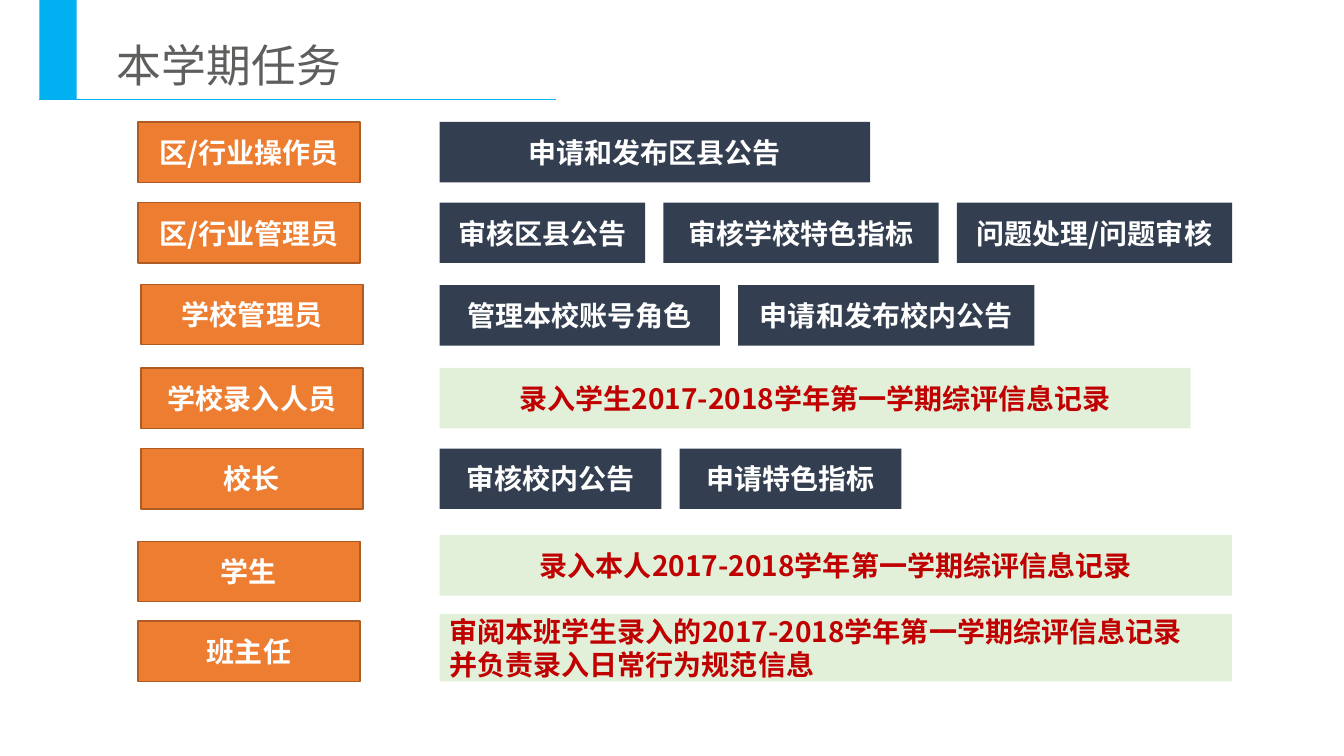
from dataclasses import dataclass
from typing import Optional

from lxml import etree
from pptx import Presentation
from pptx import util as u
from pptx.dml.color import RGBColor
from pptx.enum import shapes, text
from pptx.oxml.ns import qn

EMU_PER_PX = 9144  # 100 px to the inch
FONT = "Noto Sans CJK SC"
COLORS = {
    "accent": "00B0F0",
    "title": "5F5E5C",
    "role": "ED7D31",
    "role_border": "AF5C24",
    "task": "333F50",
    "entry": "E2F0D9",
    "entry_text": "C00000",
    "white": "FFFFFF",
}

ROLE_WIDTH = 220
BOX_HEIGHT = 60
TASK_LEFT = 436
TASK_GAP = 18


@dataclass(frozen=True)
class Task:
    label: str
    width: int
    is_entry: bool = False
    height: int = BOX_HEIGHT


@dataclass(frozen=True)
class Row:
    role: str
    role_left: int
    role_top: int
    task_top: int
    tasks: tuple[Task, ...]


ROWS = (
    Row("区/行业操作员", 137, 121, 121, (Task("申请和发布区县公告", 427),)),
    Row("区/行业管理员", 137, 201, 201, (
        Task("审核区县公告", 204),
        Task("审核学校特色指标", 273),
        Task("问题处理/问题审核", 273),
    )),
    Row("学校管理员", 140, 282, 283, (
        Task("管理本校账号角色", 278),
        Task("申请和发布校内公告", 294),
    )),
    Row("学校录入人员", 140, 365, 365, (
        Task("录入学生2017-2018学年第一学期综评信息记录", 745, is_entry=True),
    )),
    Row("校长", 140, 445, 445, (
        Task("审核校内公告", 220),
        Task("申请特色指标", 220),
    )),
    Row("学生", 137, 537, 531, (
        Task("录入本人2017-2018学年第一学期综评信息记录", 786, is_entry=True),
    )),
    Row("班主任", 137, 616, 609, (
        Task("审阅本班学生录入的2017-2018学年第一学期综评信息记录\n"
             "并负责录入日常行为规范信息", 786, is_entry=True, height=67),
    )),
)


def px(length: int) -> u.Emu:
    return u.Emu(length * EMU_PER_PX)


def color(name: str) -> RGBColor:
    return RGBColor.from_string(COLORS[name])


def write_text(shape, content: str, *, size: int, font_color: str,
               bold: bool = False, centered: bool = False,
               line_points: Optional[int] = None) -> None:
    """Fill a shape with one paragraph for each line of content."""
    frame = shape.text_frame
    frame.word_wrap = True
    frame.text = content
    for paragraph in frame.paragraphs:
        paragraph.alignment = (text.PP_ALIGN.CENTER if centered
                               else text.PP_ALIGN.LEFT)
        if line_points:
            paragraph.line_spacing = u.Pt(line_points)
        for run in paragraph.runs:
            run.font.size = u.Pt(size)
            run.font.bold = bold
            run.font.color.rgb = color(font_color)
            run.font.name = FONT
            east_asian = etree.SubElement(run.font._element, qn("a:ea"))
            east_asian.set("typeface", FONT)


def add_box(slide, left: int, top: int, width: int, height: int,
            fill: str, border: Optional[str] = None):
    shape = slide.shapes.add_shape(shapes.MSO_SHAPE.RECTANGLE, px(left),
                                   px(top), px(width), px(height))
    shape.shadow.inherit = False
    shape.fill.solid()
    shape.fill.fore_color.rgb = color(fill)
    if border:
        shape.line.color.rgb = color(border)
        shape.line.width = u.Pt(1)
    else:
        shape.line.fill.background()
    shape.text_frame.vertical_anchor = text.MSO_ANCHOR.MIDDLE
    return shape


def add_header(slide) -> None:
    add_box(slide, 39, 0, 37, 99, "accent")
    rule = slide.shapes.add_connector(shapes.MSO_CONNECTOR.STRAIGHT,
                                      px(39), px(99), px(551), px(99))
    rule.line.color.rgb = color("accent")
    rule.line.width = u.Pt(0.5)
    etree.SubElement(rule._element.spPr, qn("a:effectLst"))
    title = slide.shapes.add_textbox(px(106), px(29), px(551), px(64))
    write_text(title, "本学期任务", size=32, font_color="title", line_points=41)


def add_row(slide, row: Row) -> None:
    role = add_box(slide, row.role_left, row.role_top, ROLE_WIDTH, BOX_HEIGHT,
                   "role", "role_border")
    write_text(role, row.role, size=20, font_color="white", bold=True,
               centered=True)
    left = TASK_LEFT
    for task in row.tasks:
        box = add_box(slide, left, row.task_top, task.width, task.height,
                      "entry" if task.is_entry else "task")
        multiline = "\n" in task.label
        write_text(box, task.label, size=20, bold=True,
                   font_color="entry_text" if task.is_entry else "white",
                   centered=not multiline,
                   line_points=24 if multiline else None)
        left += task.width + TASK_GAP


def main() -> None:
    presentation = Presentation()
    presentation.slide_width = px(1333)
    presentation.slide_height = px(750)
    slide = presentation.slides.add_slide(presentation.slide_layouts[6])
    add_header(slide)
    for row in ROWS:
        add_row(slide, row)
    presentation.save("out.pptx")


if __name__ == "__main__":
    main()
